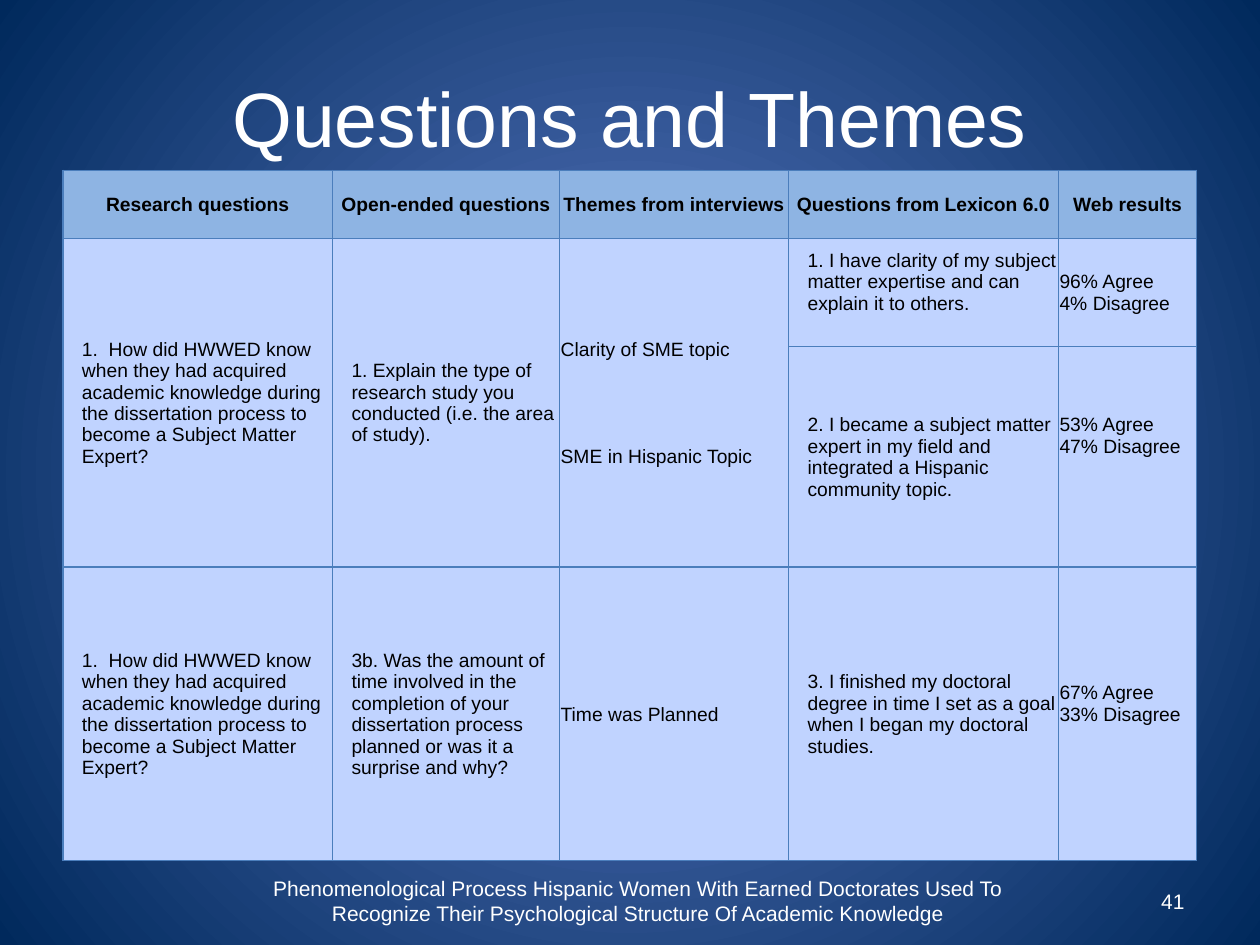
import pptx
import pptx.util
import pptx.oxml
import pptx.oxml.ns
import pptx.dml.color
import pptx.enum.text
import dataclasses
import lxml.etree

Inches = pptx.util.Inches
Pt = pptx.util.Pt
Align = pptx.enum.text.PP_ALIGN
Middle = pptx.enum.text.MSO_ANCHOR.MIDDLE
qn = pptx.oxml.ns.qn


@dataclasses.dataclass(frozen=True)
class Theme:
    font: str = "Arial"
    white: str = "FFFFFF"
    ink: str = "000000"
    head: str = "8EB4E3"
    body: str = "C0D3FF"
    rule: str = "4B7EBC"
    glow: str = "5E7CC5"
    edge: str = "00295C"
    title: int = 44
    small: int = 12
    cell: int = 11
    line: float = 0.75


def color(code):
    return pptx.dml.color.RGBColor.from_string(code)


class Deck:
    def __init__(self, theme):
        self.theme = theme
        self.file = pptx.Presentation()
        self.file.slide_width = Inches(10)
        self.file.slide_height = Inches(7.5)
        self.slide = self.file.slides.add_slide(self.file.slide_layouts[6])

    def back(self):
        fill = self.slide.background.fill
        fill.gradient()
        for stop, code in zip(fill.gradient_stops, (self.theme.glow, self.theme.edge)):
            stop.color.rgb = color(code)
        for stop, place in zip(fill.gradient_stops, (0, 1)):
            stop.position = place
        grad = self.slide.background._cSld.find(".//" + qn("a:gradFill"))
        for lin in grad.findall(qn("a:lin")):
            grad.remove(lin)
        ring = lxml.etree.SubElement(grad, qn("a:path"), path="circle")
        lxml.etree.SubElement(ring, qn("a:fillToRect"), l="50000", t="50000", r="50000", b="50000")

    def style(self, para, size, code, align, bold=False):
        para.alignment = align
        para.font.name = self.theme.font
        para.font.size = Pt(size)
        para.font.bold = bold
        para.font.color.rgb = color(code)

    def text(self, words, box, size, align):
        frame = self.slide.shapes.add_textbox(*map(Inches, box)).text_frame
        frame.word_wrap = True
        frame.vertical_anchor = Middle
        frame.text = words
        self.style(frame.paragraphs[0], size, self.theme.white, align)

    def border(self, cell):
        props = cell._tc.get_or_add_tcPr()
        for side in ("lnL", "lnR", "lnT", "lnB"):
            line = lxml.etree.SubElement(props, qn("a:" + side), w=str(Pt(self.theme.line)))
            fill = lxml.etree.SubElement(line, qn("a:solidFill"))
            lxml.etree.SubElement(fill, qn("a:srgbClr"), val=self.theme.rule)

    def table(self, box, cols, rows):
        shape = self.slide.shapes.add_table(len(rows), len(cols), *map(Inches, box))
        grid = shape.table
        for col, width in zip(grid.columns, cols):
            col.width = Inches(width)
        for row, height in zip(grid.rows, rows):
            row.height = Inches(height)
        for index, row in enumerate(grid.rows):
            for cell in row.cells:
                self.border(cell)
                cell.fill.solid()
                cell.fill.fore_color.rgb = color(self.theme.body if index else self.theme.head)
        return grid

    def cell(self, cell, words, head=False, left=0.01, lift=0, gap=0):
        cell.vertical_anchor = Middle
        cell.margin_left = Inches(left)
        cell.margin_right = cell.margin_top = Inches(0.01)
        cell.margin_bottom = Inches(lift)
        cell.text = words
        align = Align.CENTER if head else Align.LEFT
        for index, para in enumerate(cell.text_frame.paragraphs):
            self.style(para, self.theme.cell, self.theme.ink, align, head)
            if index and gap:
                para.space_before = Pt(gap)

    def save(self):
        self.file.save("out.pptx")


HEADS = [
    "Research questions",
    "Open-ended questions",
    "Themes from interviews",
    "Questions from Lexicon 6.0",
    "Web results",
]
ASK = (
    "1.  How did HWWED know when they had acquired academic knowledge during "
    "the dissertation process to become a Subject Matter Expert?"
)
INDENT = 0.15
LINE = 0.17
CELLS = [
    (1, 0, ASK, {"left": INDENT}),
    (1, 1, "1. Explain the type of research study you conducted (i.e. the area of study).",
     {"left": INDENT}),
    (1, 2, "Clarity of SME topic\nSME in Hispanic Topic", {"gap": 49}),
    (1, 3, "1. I have clarity of my subject matter expertise and can explain it to others.",
     {"left": INDENT, "lift": LINE}),
    (1, 4, "96% Agree\n4% Disagree", {}),
    (2, 3, "2. I became a subject matter expert in my field and integrated a Hispanic "
     "community topic.", {"left": INDENT}),
    (2, 4, "53% Agree\n47% Disagree", {"lift": 2 * LINE}),
    (3, 0, ASK, {"left": INDENT}),
    (3, 1, "3b. Was the amount of time involved in the completion of your dissertation "
     "process planned or was it a surprise and why?", {"left": INDENT}),
    (3, 2, "Time was Planned", {}),
    (3, 3, "3. I finished my doctoral degree in time I set as a goal when I began my "
     "doctoral studies.", {"left": INDENT}),
    (3, 4, "67% Agree\n33% Disagree", {"lift": LINE}),
]


def main():
    theme = Theme()
    deck = Deck(theme)
    deck.back()
    deck.text("Questions and Themes", (0.5, 0.3, 9, 1.25), theme.title, Align.CENTER)
    deck.text(
        "Phenomenological Process Hispanic Women With Earned Doctorates Used To "
        "Recognize Their Psychological Structure Of Academic Knowledge",
        (1.7, 6.95, 6.73, 0.4), theme.small, Align.CENTER)
    deck.text("41", (7.17, 6.95, 2.33, 0.4), theme.small, Align.RIGHT)

    grid = deck.table((0.5, 1.35, 9, 5.48), (2.14, 1.8, 1.82, 2.14, 1.1),
                      (0.54, 0.86, 1.75, 2.33))
    for col in range(3):
        grid.cell(1, col).merge(grid.cell(2, col))
    for col, words in enumerate(HEADS):
        deck.cell(grid.cell(0, col), words, head=True)
    for row, col, words, look in CELLS:
        deck.cell(grid.cell(row, col), words, **look)
    deck.save()


if __name__ == "__main__":
    main()
